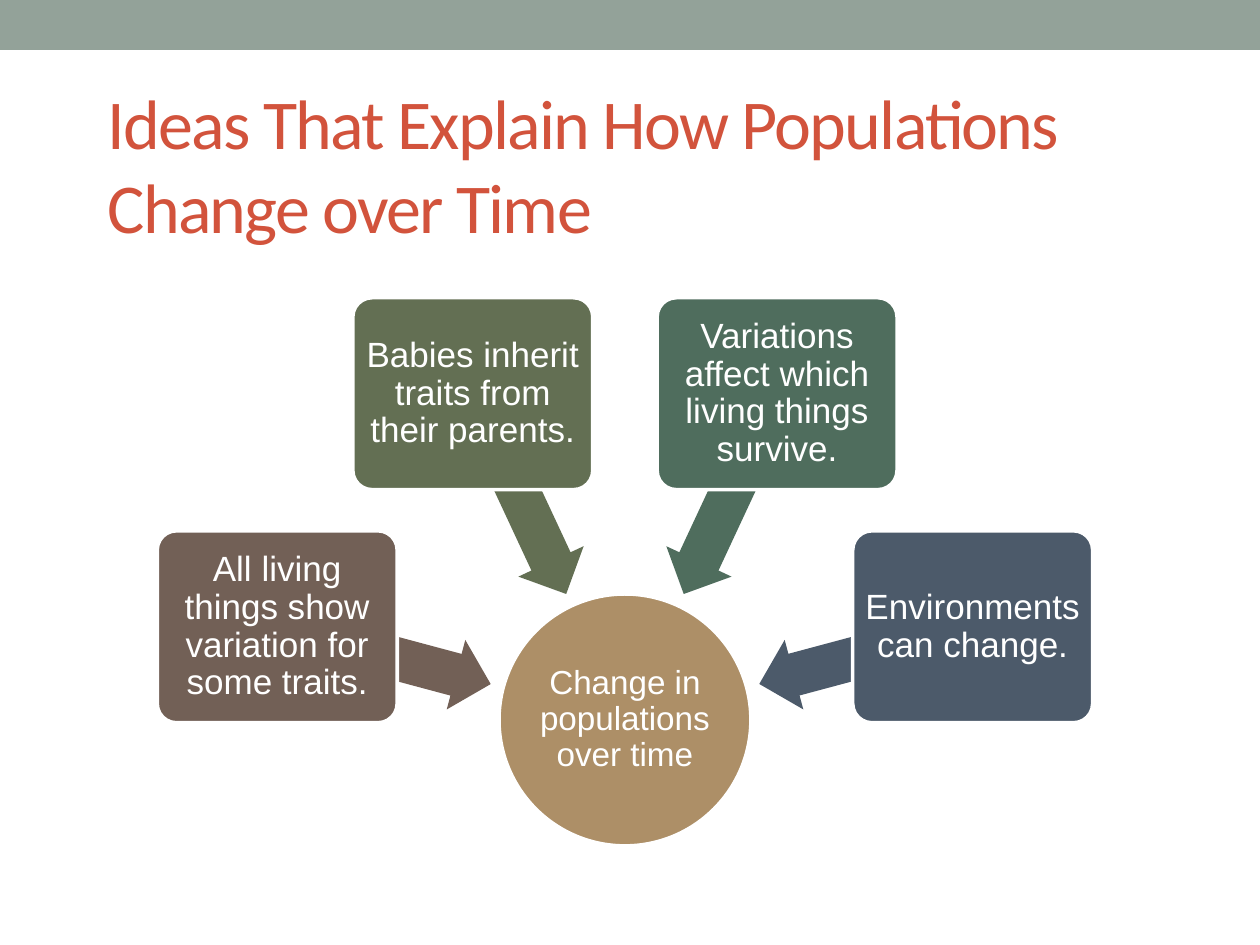
import math
from dataclasses import dataclass
from pptx import Presentation, util as u
from pptx.dml.color import RGBColor
from pptx.enum import shapes, text


@dataclass(frozen=True)
class Theme:
    band: str = "93A299"
    title: str = "D2533C"
    hub: str = "AD8F67"
    white: str = "FFFFFF"
    title_font: str = "Calibri"
    body_font: str = "Arial"
    title_size: int = 40
    hub_size: int = 19
    idea_size: int = 20
    outline: float = 2.08


theme = Theme()
PX = u.Inches(1) / 126


def add_shape(kind, cx, cy, w, h, fill, outlined=False):
    box = [round(v * PX) for v in (cx - w / 2, cy - h / 2, w, h)]
    sp = s.shapes.add_shape(kind, *box)
    sp.shadow.inherit = False
    sp.fill.solid()
    sp.fill.fore_color.rgb = RGBColor.from_string(fill)
    if outlined:
        sp.line.color.rgb = RGBColor.from_string(theme.white)
        sp.line.width = u.Pt(theme.outline)
    else:
        sp.line.fill.background()
    return sp


def add_label(sp, words, size, inset):
    tf = sp.text_frame
    tf.word_wrap = True
    tf.vertical_anchor = text.MSO_ANCHOR.MIDDLE
    tf.margin_left = tf.margin_right = round(inset * PX)
    tf.margin_top = tf.margin_bottom = round(inset * PX)
    p = tf.paragraphs[0]
    p.text = words
    p.alignment = text.PP_ALIGN.CENTER
    p.line_spacing = 0.9
    p.font.name = theme.body_font
    p.font.size = u.Pt(size)
    p.font.color.rgb = RGBColor.from_string(theme.white)


prs = Presentation()
prs.slide_width = u.Inches(10)
prs.slide_height = u.Inches(7.5)
s = prs.slides.add_slide(prs.slide_layouts[5])

add_shape(shapes.MSO_SHAPE.RECTANGLE, 630, 25, 1260, 50, theme.band)

title = s.shapes.title
title.left, title.top, title.width, title.height = [
    round(v * PX) for v in (95, 95, 1102, 136)
]
tf = title.text_frame
tf.word_wrap = True
tf.auto_size = text.MSO_AUTO_SIZE.NONE
tf.vertical_anchor = text.MSO_ANCHOR.MIDDLE
p = tf.paragraphs[0]
p.alignment = text.PP_ALIGN.LEFT
r = p.add_run()
r.text = "Ideas That Explain How Populations Change over Time"
r.font.name = theme.title_font
r.font.size = u.Pt(theme.title_size)
r.font.color.rgb = RGBColor.from_string(theme.title)
r.font._element.set("spc", "-100")

HUB_X, HUB_Y, HUB_SIZE = 625, 720, 252
ARROW_RADIUS, IDEA_RADIUS = 249, 360
FIRST_ANGLE, ANGLE_STEP = 195, 50

hub = add_shape(shapes.MSO_SHAPE.OVAL, HUB_X, HUB_Y, HUB_SIZE, HUB_SIZE, theme.hub, True)
add_label(hub, "Change in populations over time", theme.hub_size, 1)

ideas = [
    ("All living things show variation for some traits.", "726056"),
    ("Babies inherit traits from their parents.", "636F53"),
    ("Variations affect which living things survive.", "4F6D5D"),
    ("Environments can change.", "4C5A6A"),
]
for i, (words, color) in enumerate(ideas):
    angle = FIRST_ANGLE + i * ANGLE_STEP
    dx, dy = math.cos(math.radians(angle)), math.sin(math.radians(angle))
    arrow = add_shape(shapes.MSO_SHAPE.LEFT_ARROW, HUB_X + ARROW_RADIUS * dx,
                      HUB_Y + ARROW_RADIUS * dy, 220, 72, color)
    arrow.rotation = angle
    arrow.adjustments[0] = 0.6
    arrow.adjustments[1] = 0.5
    idea = add_shape(shapes.MSO_SHAPE.ROUNDED_RECTANGLE, HUB_X + IDEA_RADIUS * dx,
                     HUB_Y + IDEA_RADIUS * dy, 240, 192, color, True)
    idea.adjustments[0] = 0.1
    add_label(idea, words, theme.idea_size, 5)

prs.save("out.pptx")
